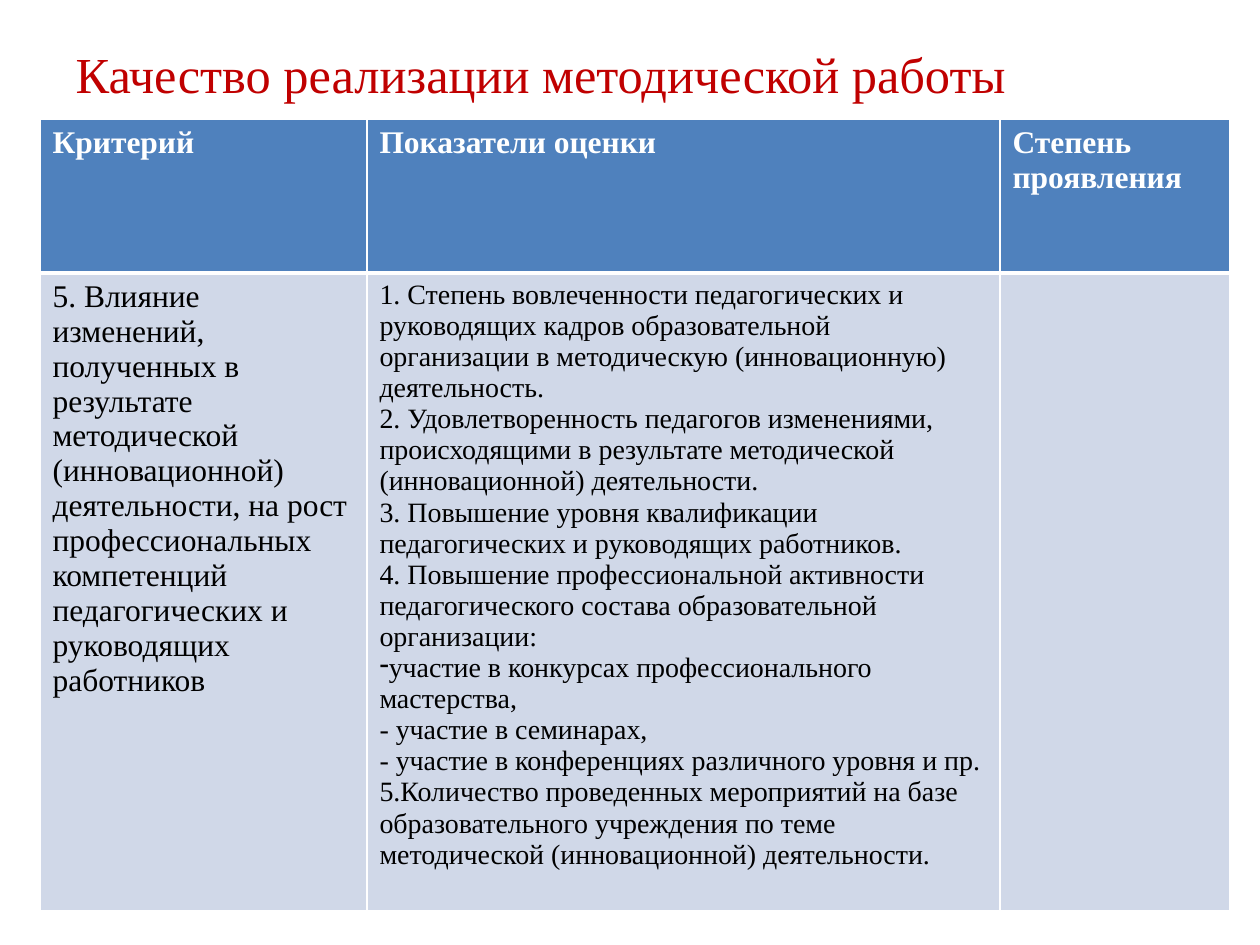
from dataclasses import dataclass

from lxml.etree import SubElement
from pptx import Presentation
from pptx.dml.color import RGBColor
from pptx.enum.text import MSO_ANCHOR as Anchor, MSO_AUTO_SIZE as AutoSize, PP_ALIGN as Align
from pptx.oxml import parse_xml
from pptx.oxml.ns import nsdecls, qn
from pptx.util import Emu, Pt

EMU_PER_PX = 914400 / 126
TITLE_ONLY = 5


def px(length):
    return Emu(round(length * EMU_PER_PX))


@dataclass(frozen=True)
class Theme:
    font: str = "Times New Roman"
    title_color: str = "C00000"
    header_fill: str = "4F81BD"
    body_fill: str = "D0D8E8"
    header_text: str = "FFFFFF"
    body_text: str = "000000"
    border: str = "FFFFFF"
    title_size: float = 28.8
    table_size: int = 18
    detail_size: int = 16
    thin_line: int = 1
    thick_line: int = 3


@dataclass(frozen=True)
class Bullet:
    text: str
    mark: str = "-"


HEADERS = ["Критерий", "Показатели оценки", "Степень проявления"]
CRITERION = [
    "5. Влияние изменений, полученных в результате методической (инновационной) "
    "деятельности, на рост профессиональных компетенций педагогических и "
    "руководящих работников",
]
INDICATORS = [
    "1. Степень вовлеченности педагогических и руководящих кадров образовательной "
    "организации в методическую (инновационную) деятельность.",
    "2. Удовлетворенность педагогов изменениями, происходящими в результате "
    "методической (инновационной) деятельности.",
    "3. Повышение уровня квалификации педагогических и руководящих работников.",
    "4. Повышение профессиональной активности педагогического состава "
    "образовательной организации:",
    Bullet("участие в конкурсах профессионального мастерства,"),
    "- участие в семинарах,",
    "- участие в конференциях различного уровня и пр.",
    "5.Количество проведенных мероприятий на базе образовательного учреждения "
    "по теме методической (инновационной) деятельности.",
]


class SlideBuilder:
    def __init__(self, slide, theme):
        self.slide = slide
        self.theme = theme

    def style_font(self, paragraph, size, color, bold=False):
        font = paragraph.font
        font.name = self.theme.font
        font.size = Pt(size)
        font.bold = bold
        font.color.rgb = RGBColor.from_string(color)

    def title(self, text, left, top, width, height):
        shape = self.slide.shapes.title
        shape.left, shape.top, shape.width, shape.height = map(px, (left, top, width, height))
        frame = shape.text_frame
        frame.text = text
        frame.word_wrap = True
        frame.auto_size = AutoSize.NONE
        frame.vertical_anchor = Anchor.MIDDLE
        paragraph = frame.paragraphs[0]
        paragraph.alignment = Align.JUSTIFY
        self.style_font(paragraph, self.theme.title_size, self.theme.title_color)

    def table(self, left, top, widths, heights):
        shape = self.slide.shapes.add_table(
            len(heights), len(widths), px(left), px(top), px(sum(widths)), px(sum(heights))
        )
        table = shape.table
        for column, width in zip(table.columns, widths):
            column.width = px(width)
        for row, height in zip(table.rows, heights):
            row.height = px(height)
        return table

    def cell(self, cell, items, size, header=False):
        theme = self.theme
        cell.fill.solid()
        cell.fill.fore_color.rgb = RGBColor.from_string(
            theme.header_fill if header else theme.body_fill
        )
        self.borders(cell, header)
        color = theme.header_text if header else theme.body_text
        frame = cell.text_frame
        for index, item in enumerate(items):
            paragraph = frame.add_paragraph() if index else frame.paragraphs[0]
            self.style_font(paragraph, size, color, bold=header)
            if isinstance(item, Bullet):
                self.bullet(paragraph, item.mark)
                paragraph.text = item.text
            else:
                paragraph.text = item

    def borders(self, cell, header):
        """Thin lines all round, with a thick one between header and body."""
        theme = self.theme
        thick_side = "B" if header else "T"
        properties = cell._tc.get_or_add_tcPr()
        for index, side in enumerate("LRTB"):
            width = theme.thick_line if side == thick_side else theme.thin_line
            properties.insert(index, parse_xml(
                f'<a:ln{side} {nsdecls("a")} w="{Pt(width)}"><a:solidFill>'
                f'<a:srgbClr val="{theme.border}"/></a:solidFill></a:ln{side}>'
            ))

    def bullet(self, paragraph, mark):
        properties = paragraph._p.get_or_add_pPr()
        properties.set("marL", "0")
        properties.set("indent", "0")
        character = SubElement(properties, qn("a:buChar"))
        character.set("char", mark)
        properties.insert(0, character)


def main():
    presentation = Presentation()
    presentation.slide_width = px(1260)
    presentation.slide_height = px(945)
    slide = presentation.slides.add_slide(presentation.slide_layouts[TITLE_ONLY])
    theme = Theme()
    builder = SlideBuilder(slide, theme)

    builder.title("Качество реализации методической работы", 63, 38, 1134, 70)
    table = builder.table(40, 119, widths=[327, 633, 230], heights=[154, 638])
    for column, header in enumerate(HEADERS):
        builder.cell(table.cell(0, column), [header], theme.table_size, header=True)
    body = [(CRITERION, theme.table_size), (INDICATORS, theme.detail_size), ([], theme.table_size)]
    for column, (items, size) in enumerate(body):
        builder.cell(table.cell(1, column), items, size)

    presentation.save("out.pptx")


if __name__ == "__main__":
    main()
